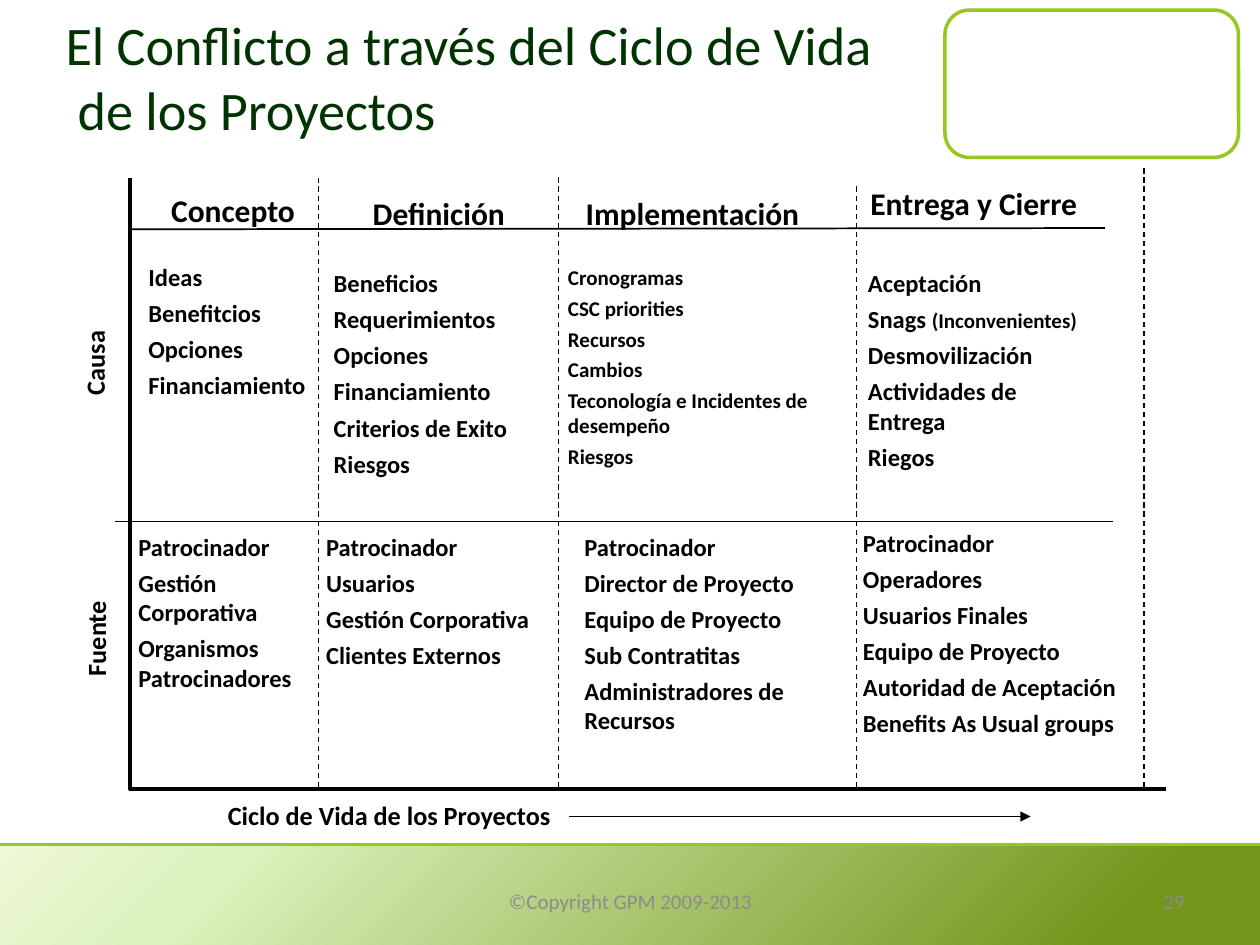
from copy import deepcopy
from dataclasses import dataclass

from pptx import Presentation
from pptx.dml.color import RGBColor
from pptx.enum.dml import MSO_LINE
from pptx.enum.shapes import MSO_CONNECTOR, MSO_SHAPE
from pptx.enum.text import MSO_ANCHOR, PP_ALIGN
from pptx.oxml.ns import qn
from pptx.util import Inches, Pt

DASH = MSO_LINE.DASH
LINE = MSO_CONNECTOR.STRAIGHT
RECT, ROUND = MSO_SHAPE.RECTANGLE, MSO_SHAPE.ROUNDED_RECTANGLE
LEFT, MID, RIGHT = PP_ALIGN.LEFT, PP_ALIGN.CENTER, PP_ALIGN.RIGHT
TOP, CENTER = MSO_ANCHOR.TOP, MSO_ANCHOR.MIDDLE

FONT = "Calibri"
BLACK, GREEN, GREY = "000000", "98C723", "8C8C8C"
WIDE, HIGH = 10, 7.5
COLS = (1.03, 2.53, 4.43, 6.8, 9.08)  # phase edges
ROWS = (1.41, 2.08, 4.17, 6.26)  # heading, cause, source, base
GAP = 0.27  # paragraph gap as a share of the text size


@dataclass
class Cell:
    """Text set in a grid cell, nudged by dx and dy."""
    col: int
    row: int
    dx: float
    dy: float
    wide: float
    lines: tuple
    size: float = 14


@dataclass
class Rule:
    x1: float
    y1: float
    x2: float
    y2: float
    width: float = 0.75
    color: str = BLACK
    dash: bool = False
    arrow: bool = False


HEADS = (
    Cell(0, 0, 0.23, 0.06, 1.19, ("Concepto",), 18),
    Cell(1, 0, 0.33, 0.08, 1.26, ("Definición",), 18),
    Cell(2, 0, 0.12, 0.08, 1.91, ("Implementación",), 18),
    Cell(3, 0, 0.01, 0, 2.2, ("Entrega y Cierre",), 18),
)
CELLS = (
    Cell(0, 1, 0.05, -0.05, 1.5,
         ("Ideas", "Benefitcios", "Opciones", "Financiamiento")),
    Cell(1, 1, 0.02, 0, 1.98,
         ("Beneficios", "Requerimientos", "Opciones", "Financiamiento",
          "Criterios de Exito", "Riesgos")),
    Cell(2, 1, -0.02, -0.03, 2.43,
         ("Cronogramas", "CSC priorities", "Recursos", "Cambios",
          "Teconología e Incidentes de desempeño", "Riesgos"), 12),
    Cell(3, 1, -0.01, 0, 1.98,
         ("Aceptación", ("Snags ", "(Inconvenientes)"), "Desmovilización",
          "Actividades de Entrega", "Riegos")),
    Cell(0, 2, -0.03, 0, 1.49,
         ("Patrocinador", "Gestión Corporativa",
          "Organismos Patrocinadores")),
    Cell(1, 2, -0.04, 0, 1.91,
         ("Patrocinador", "Usuarios", "Gestión Corporativa",
          "Clientes Externos")),
    Cell(2, 2, 0.11, 0, 2.17,
         ("Patrocinador", "Director de Proyecto", "Equipo de Proyecto",
          "Sub Contratitas", "Administradores de Recursos")),
    Cell(3, 2, -0.05, -0.03, 2.25,
         ("Patrocinador", "Operadores", "Usuarios Finales",
          "Equipo de Proyecto", "Autoridad de Aceptación",
          "Benefits As Usual groups")),
)
TIPS = (1.41, 1.38, 1.45, 1.32)  # tops of the dashed phase lines
RULES = (
    *(Rule(x, 6.25, x, top, dash=True) for x, top in zip(COLS[1:], TIPS)),
    Rule(COLS[0], 1.82, 8.77, 1.81, 1),
    Rule(0.91, 4.14, 8.83, 4.14, 1),
    Rule(4.52, 6.48, 8.18, 6.48, arrow=True),
)


def tint(code: str) -> RGBColor:
    return RGBColor.from_string(code)


def box(x: float, y: float, w: float, h: float) -> tuple:
    return Inches(x), Inches(y), Inches(w), Inches(h)


def style(para, size: float, color: str = BLACK, bold: bool = False) -> None:
    font = para.font
    font.name, font.size, font.bold = FONT, Pt(size), bold
    font.color.rgb = tint(color)


def write(slide, place: tuple, lines: tuple, size: float, color: str = BLACK,
          bold: bool = True, wrap: bool = True, align=LEFT, anchor=TOP):
    shape = slide.shapes.add_textbox(*box(*place))
    frame = shape.text_frame
    frame.word_wrap, frame.vertical_anchor = wrap, anchor
    for i, line in enumerate(lines):
        para = frame.add_paragraph() if i else frame.paragraphs[0]
        style(para, size, color, bold)
        para.alignment = align
        para.space_after = Pt(round(size * GAP, 1) if len(lines) > 1 else 0)
        main, *notes = (line,) if isinstance(line, str) else line
        para.add_run().text = main
        for note in notes:
            run = para.add_run()
            run.text, run.font.size = note, Pt(12)
    return shape


def fill_cell(slide, cell: Cell, wrap: bool = True) -> None:
    x, y = COLS[cell.col] + cell.dx, ROWS[cell.row] + cell.dy
    high = 0.4 if cell.row == 0 else 1.85
    write(slide, (x, y, cell.wide, high), cell.lines, cell.size, wrap=wrap)


def draw_rule(slide, rule: Rule) -> None:
    ends = box(rule.x1, rule.y1, rule.x2, rule.y2)
    link = slide.shapes.add_connector(LINE, *ends)
    link.line.width = Pt(rule.width)
    link.line.color.rgb = tint(rule.color)
    if rule.dash:
        link.line.dash_style = DASH
    props = link._element.spPr
    if rule.arrow:
        tail = props.find(qn("a:ln")).makeelement(qn("a:tailEnd"), {"type": "triangle"})
        props.find(qn("a:ln")).append(tail)
    props.append(props.makeelement(qn("a:effectLst"), {}))


def draw_frame(slide) -> None:
    """Green footer band, its top edge and the empty corner panel."""
    panel = slide.shapes.add_shape(ROUND, *box(7.5, 0.08, 2.33, 1.17))
    panel.shadow.inherit = False
    panel.fill.solid()
    panel.fill.fore_color.rgb = tint("FFFFFF")
    panel.line.color.rgb = tint(GREEN)
    panel.line.width = Pt(2)

    band = slide.shapes.add_shape(RECT, *box(0, 6.71, WIDE, HIGH - 6.71))
    band.shadow.inherit = False
    band.line.fill.background()
    band.fill.gradient()
    band.fill.gradient_angle = 315
    first = band._element.spPr.find(".//" + qn("a:gs"))
    first.addnext(deepcopy(first))
    shades = ((0, "EEF8D5"), (0.19, "DAF2BC"), (0.89, "72951A"))
    for stop, (place, code) in zip(band.fill.gradient_stops, shades):
        stop.position, stop.color.rgb = place, tint(code)
    draw_rule(slide, Rule(0, 6.7, WIDE, 6.7, 1.5, GREEN))


def draw_axes(slide) -> None:
    x, y = COLS[0], ROWS[-1]
    pen = slide.shapes.build_freeform(Inches(x), Inches(ROWS[0]))
    pen.add_line_segments([(Inches(x), Inches(y)), (Inches(9.25), Inches(y))],
                          close=False)
    axes = pen.convert_to_shape()
    axes.shadow.inherit = False
    axes.fill.background()
    axes.line.color.rgb = tint(BLACK)
    axes.line.width = Pt(2.25)


def set_title(slide) -> None:
    title = slide.shapes.title
    title.left, title.top, title.width, title.height = box(0.42, 0, 9.34, 1.21)
    frame = title.text_frame
    frame.text = "El Conflicto a través del Ciclo de Vida\v de los Proyectos"
    frame.vertical_anchor = CENTER
    frame.paragraphs[0].alignment = LEFT
    style(frame.paragraphs[0], 31, "003300")


def main() -> None:
    deck = Presentation()
    deck.slide_width, deck.slide_height = Inches(WIDE), Inches(HIGH)
    slide = deck.slides.add_slide(deck.slide_layouts[5])
    draw_frame(slide)
    set_title(slide)
    draw_axes(slide)
    for rule in RULES:
        draw_rule(slide, rule)
    for head in HEADS:
        fill_cell(slide, head, wrap=False)
    for cell in CELLS:
        fill_cell(slide, cell)
    for name, place in (("Causa", (0.39, 2.7, 0.72, 0.35)),
                        ("Fuente", (0.36, 4.89, 0.8, 0.35))):
        write(slide, place, (name,), 15, wrap=False).rotation = 270
    write(slide, (1.71, 6.29, 2.79, 0.35), ("Ciclo de Vida de los Proyectos",),
          15, wrap=False)
    for note, x, wide, align in (("©Copyright GPM 2009-2013", 3.42, 3.17, MID),
                                 ("29", 7.17, 2.33, RIGHT)):
        write(slide, (x, 6.95, wide, 0.4), (note,), 12, GREY, bold=False,
              align=align, anchor=CENTER)
    deck.save("out.pptx")


if __name__ == "__main__":
    main()
